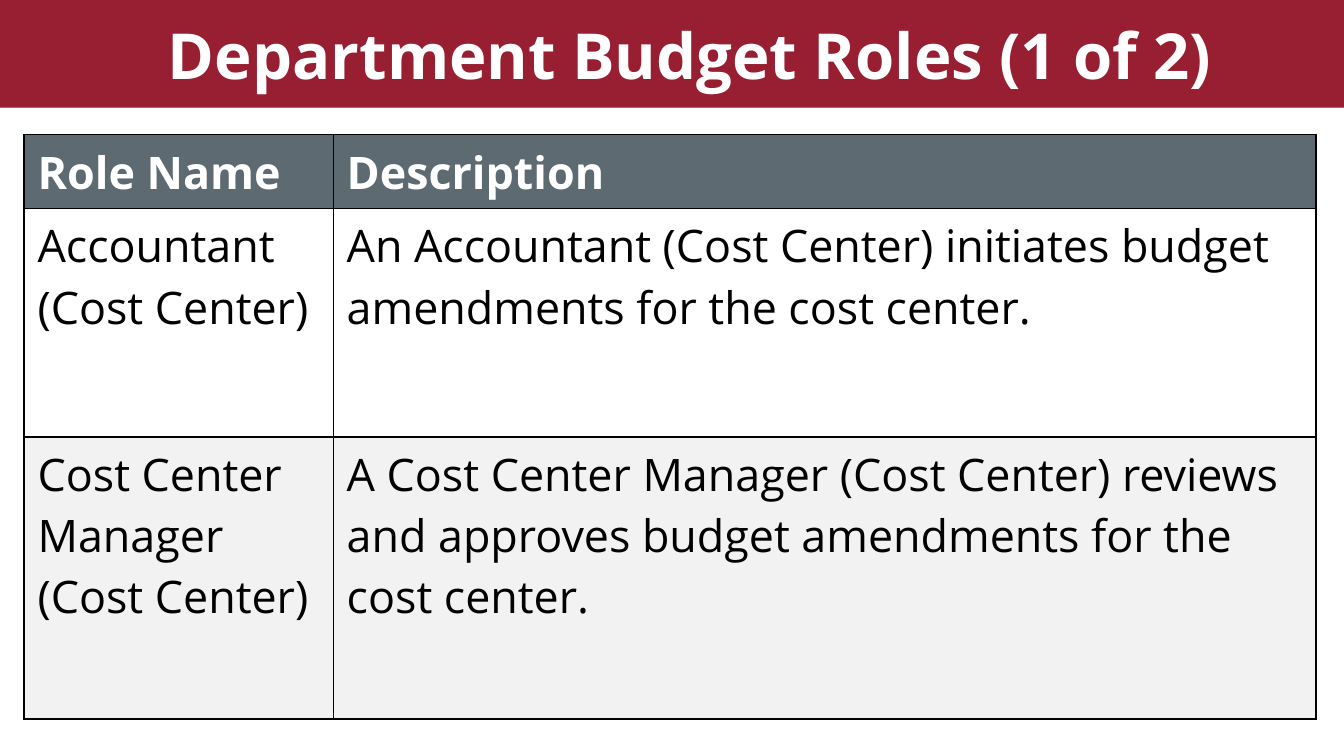
from typing import NamedTuple

from lxml.etree import SubElement
from pptx import Presentation
from pptx.dml.color import RGBColor
from pptx.enum.shapes import MSO_CONNECTOR as Connector, MSO_SHAPE as Shape
from pptx.enum.text import MSO_ANCHOR as Anchor, PP_ALIGN as Align
from pptx.oxml.ns import qn
from pptx.util import Inches, Pt

COLORS = {
    "crimson": "981E32",
    "gold": "8F7E35",
    "slate": "5E6A71",
    "band": "F2F2F2",
    "white": "FFFFFF",
    "black": "000000",
}
FONT = "Open Sans"
SLIDE_WIDTH = 10
SLIDE_HEIGHT = SLIDE_WIDTH * 9 / 16
BANNER_HEIGHT = 0.8
COLUMN_WIDTHS = (2.3, 7.31)


class RoleRow(NamedTuple):
    role: str
    description: str
    height: float
    fill: str = "white"
    color: str = "black"
    bold: bool = False
    anchor: Anchor = Anchor.TOP


ROWS = (
    RoleRow("Role Name", "Description", 0.55, "slate", "white", True, Anchor.MIDDLE),
    RoleRow("Accountant (Cost Center)",
            "An Accountant (Cost Center) initiates budget amendments for the cost center.", 1.7),
    RoleRow("Cost Center Manager (Cost Center)",
            "A Cost Center Manager (Cost Center) reviews and approves budget amendments "
            "for the cost center.", 2.1, "band"),
)


def rgb(name: str) -> RGBColor:
    return RGBColor.from_string(COLORS[name])


def write(frame, text: str, *, size: float = 24, color: str = "black",
          bold: bool = False, spacing: float = 1.0) -> None:
    frame.word_wrap = True
    paragraph = frame.paragraphs[0]
    paragraph.alignment = Align.LEFT
    paragraph.line_spacing = spacing
    run = paragraph.add_run()
    run.text = text
    run.font.name = FONT
    run.font.size = Pt(size)
    run.font.bold = bold
    run.font.color.rgb = rgb(color)


def draw_banner(slide) -> None:
    width, height = Inches(SLIDE_WIDTH), Inches(BANNER_HEIGHT)
    banner = slide.shapes.add_shape(Shape.RECTANGLE, 0, 0, width, height)
    banner.shadow.inherit = False
    banner.fill.solid()
    banner.fill.fore_color.rgb = rgb("crimson")
    banner.line.fill.background()

    rule = slide.shapes.add_connector(Connector.STRAIGHT, 0, height, width, height)
    rule.line.color.rgb = rgb("gold")
    rule.line.width = Pt(1)
    SubElement(rule._element.spPr, qn("a:effectLst"))


def draw_title(slide, text: str) -> None:
    title = slide.shapes.add_textbox(Inches(0.75), Inches(0.1), Inches(9.14), Inches(0.64))
    frame = title.text_frame
    frame.margin_left = frame.margin_right = Inches(0.5)
    frame.vertical_anchor = Anchor.BOTTOM
    write(frame, text, size=34, color="white", bold=True, spacing=0.9)


def add_borders(cell) -> None:
    properties = cell._tc.get_or_add_tcPr()
    for position, side in enumerate(("a:lnL", "a:lnR", "a:lnT", "a:lnB")):
        border = properties.makeelement(qn(side), {"w": str(Pt(1))})
        fill = SubElement(border, qn("a:solidFill"))
        SubElement(fill, qn("a:srgbClr"), val=COLORS["black"])
        properties.insert(position, border)


def draw_roles(slide, rows: tuple[RoleRow, ...]) -> None:
    table = slide.shapes.add_table(
        len(rows), len(COLUMN_WIDTHS), Inches(0.18), Inches(1),
        Inches(sum(COLUMN_WIDTHS)), Inches(sum(row.height for row in rows))).table
    for column, width in zip(table.columns, COLUMN_WIDTHS):
        column.width = Inches(width)
    for table_row, row in zip(table.rows, rows):
        table_row.height = Inches(row.height)
        for cell, text in zip(table_row.cells, (row.role, row.description)):
            cell.fill.solid()
            cell.fill.fore_color.rgb = rgb(row.fill)
            cell.vertical_anchor = row.anchor
            add_borders(cell)
            write(cell.text_frame, text, color=row.color, bold=row.bold)


def main() -> None:
    """Build the department budget roles slide."""
    deck = Presentation()
    deck.slide_width, deck.slide_height = Inches(SLIDE_WIDTH), Inches(SLIDE_HEIGHT)
    slide = deck.slides.add_slide(deck.slide_layouts[6])
    draw_banner(slide)
    draw_title(slide, "Department Budget Roles (1 of 2)")
    draw_roles(slide, ROWS)
    deck.save("out.pptx")


if __name__ == "__main__":
    main()
